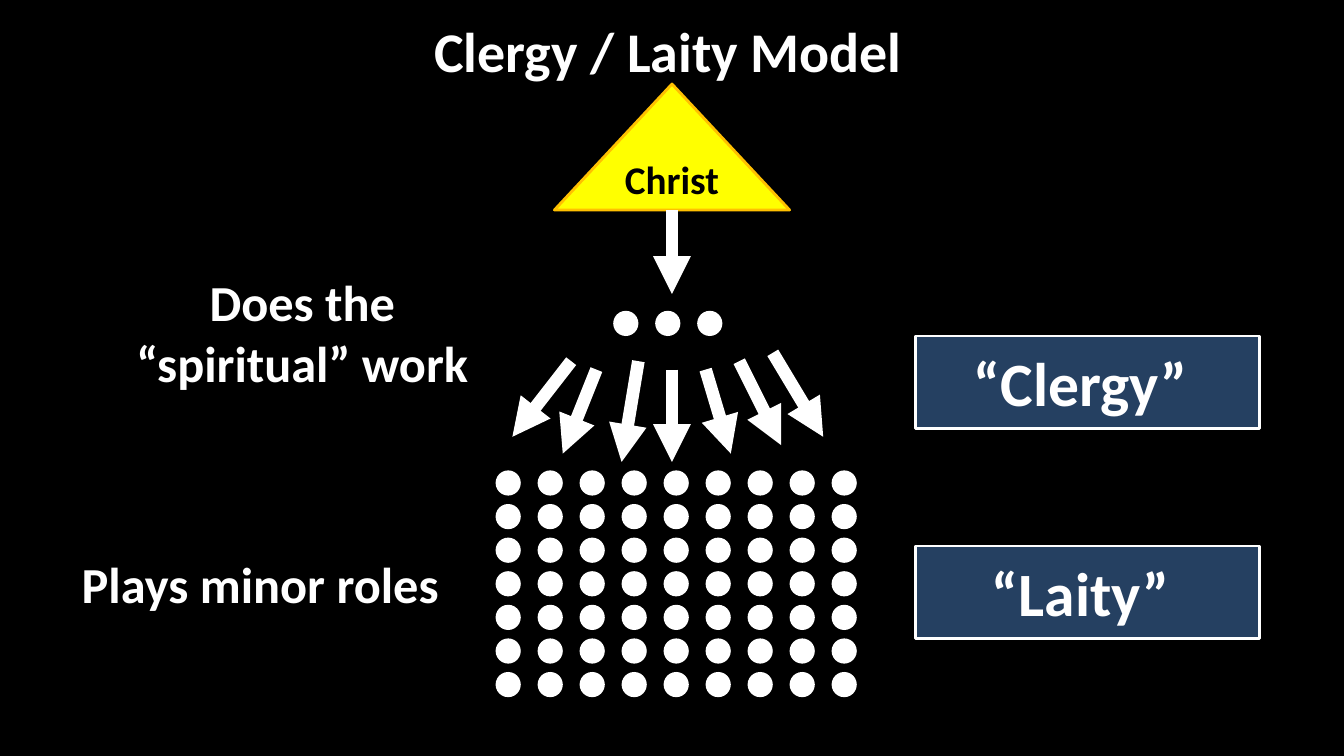
from dataclasses import dataclass

from lxml.etree import SubElement
from pptx import Presentation
from pptx.dml.color import RGBColor
from pptx.enum.shapes import MSO_CONNECTOR, MSO_SHAPE
from pptx.enum.text import MSO_ANCHOR, PP_ALIGN
from pptx.oxml.ns import qn
from pptx.util import Inches, Pt


@dataclass(frozen=True)
class Theme:
    """Colours, type sizes and line widths of the slide."""
    font: str = "Calibri"
    black: RGBColor = RGBColor(0x00, 0x00, 0x00)
    white: RGBColor = RGBColor(0xFF, 0xFF, 0xFF)
    yellow: RGBColor = RGBColor(0xFF, 0xFF, 0x00)
    orange: RGBColor = RGBColor(0xFF, 0xC0, 0x00)
    navy: RGBColor = RGBColor(0x25, 0x40, 0x61)
    title_size: int = 40
    apex_size: int = 28
    role_size: int = 36
    group_size: int = 44
    outline: int = 2
    arrow: int = 9


THEME = Theme()
COLUMNS, ROWS = 160, 90
CELL = Inches(7.5) / ROWS
DOT_SIZE, DOT_PITCH, ROW_PITCH = 3, 5, 4


def grid(*counts):
    """Turn counts of grid cells into lengths."""
    return [round(count * CELL) for count in counts]


def add_block(shapes, kind, box, fill=None, line=None):
    """Add a preset shape in a grid box, with no shadow."""
    shape = shapes.add_shape(kind, *grid(*box))
    shape.shadow.inherit = False
    if fill is None:
        shape.fill.background()
    else:
        shape.fill.solid()
        shape.fill.fore_color.rgb = fill
    if line is None:
        shape.line.fill.background()
    else:
        shape.line.color.rgb = line
        shape.line.width = Pt(THEME.outline)
    return shape


def add_words(shape, text, size, color):
    """Write one bold centred paragraph in a shape."""
    frame = shape.text_frame
    frame.word_wrap = True
    frame.vertical_anchor = MSO_ANCHOR.MIDDLE
    paragraph = frame.paragraphs[0]
    paragraph.alignment = PP_ALIGN.CENTER
    run = paragraph.add_run()
    run.text = text
    run.font.name = THEME.font
    run.font.size = Pt(size)
    run.font.bold = True
    run.font.color.rgb = color


def add_caption(slide, box, text, size):
    """Add white words in an unfilled callout."""
    shape = add_block(slide.shapes, MSO_SHAPE.ROUNDED_RECTANGULAR_CALLOUT, box)
    for index, value in enumerate((-0.22, 0.5, 0.17)):
        shape.adjustments[index] = value
    add_words(shape, text, size, THEME.white)


def add_group_label(slide, box, text):
    """Add a navy box that names a group of people."""
    shape = add_block(slide.shapes, MSO_SHAPE.RECTANGLE, box, THEME.navy, THEME.white)
    add_words(shape, text, THEME.group_size, THEME.white)


def add_apex(slide, box):
    """Add the triangle at the top, with the arrow that leaves its base."""
    left, top, width, height = box
    shape = add_block(slide.shapes, MSO_SHAPE.ISOSCELES_TRIANGLE, box, THEME.yellow, THEME.orange)
    add_words(shape, "Christ", THEME.apex_size, THEME.black)
    middle, base = left + width / 2, top + height
    add_arrow(slide, (middle, base), (middle, base + 10))


def add_arrow(slide, start, end):
    """Add a thick white arrow between two grid points."""
    connector = slide.shapes.add_connector(MSO_CONNECTOR.STRAIGHT, *grid(*start, *end))
    connector.line.color.rgb = THEME.white
    connector.line.width = Pt(THEME.arrow)
    SubElement(connector.line._get_or_add_ln(), qn("a:tailEnd"), type="triangle")
    SubElement(connector._element.spPr, qn("a:effectLst"))


def add_fan(slide, box):
    """Add the arrows that spread from the clergy to the laity."""
    left, top, _, _ = box
    spread = (
        ((7, 1), (0, 10)), ((10, 2), (6, 12)), ((15, 1), (13, 13)),
        ((19, 2), (19, 13)), ((23, 2), (26, 12)), ((27, 1), (32, 11)),
        ((31, 0), (37, 10)),
    )
    for start, end in spread:
        add_arrow(slide, *((left + x, top + y) for x, y in (start, end)))


def add_people(slide, box):
    """Fill a box with rows of dots, one group to a row."""
    left, top, width, height = box
    for y in range(top, top + height, ROW_PITCH):
        row = slide.shapes.add_group_shape()
        for x in range(left, left + width, DOT_PITCH):
            add_block(row.shapes, MSO_SHAPE.OVAL, (x, y, DOT_SIZE, DOT_SIZE), THEME.white)


def build_model(slide):
    """Lay out the whole model on the slide."""
    slide.background.fill.solid()
    slide.background.fill.fore_color.rgb = THEME.black
    add_caption(slide, (30, 1, 99, 10), "Clergy / Laity Model", THEME.title_size)
    add_apex(slide, (66, 10, 28, 15))
    add_fan(slide, (61, 42, 37, 13))
    add_people(slide, (59, 56, 43, 27))
    add_caption(slide, (14, 31, 44, 17), "Does the “spiritual” work", THEME.role_size)
    add_caption(slide, (7, 62, 48, 15), "Plays minor roles", THEME.role_size)
    add_people(slide, (73, 37, 13, 3))
    add_group_label(slide, (109, 40, 41, 11), "“Clergy” ")
    add_group_label(slide, (109, 65, 41, 11), "“Laity” ")


def main():
    """Build and save the presentation."""
    presentation = Presentation()
    presentation.slide_width, presentation.slide_height = grid(COLUMNS, ROWS)
    build_model(presentation.slides.add_slide(presentation.slide_layouts[6]))
    presentation.save("out.pptx")


if __name__ == "__main__":
    main()
